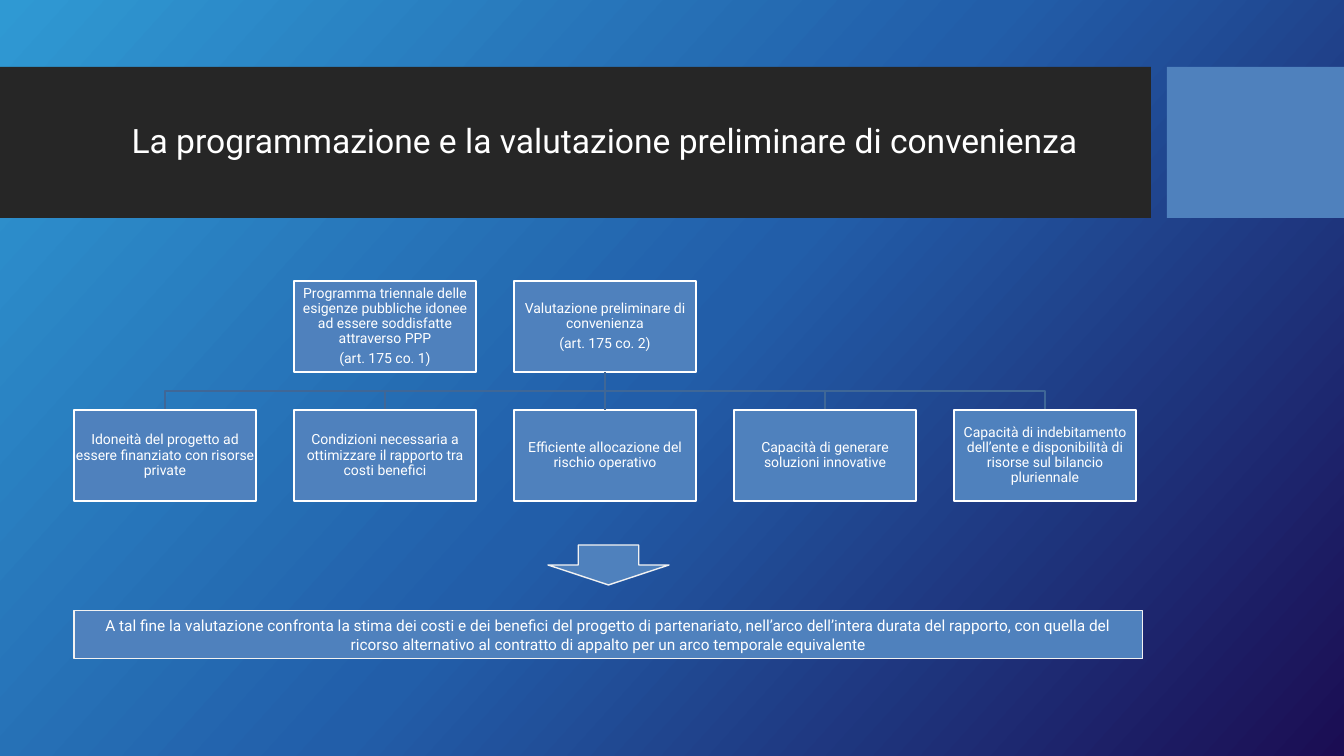
import dataclasses
import copy

import lxml.etree
import pptx
import pptx.dml.color
import pptx.enum.shapes
import pptx.enum.text
import pptx.oxml.ns
import pptx.util

RGB = pptx.dml.color.RGBColor
SHAPE = pptx.enum.shapes.MSO_SHAPE
MIDDLE = pptx.enum.text.MSO_ANCHOR.MIDDLE
CENTER = pptx.enum.text.PP_ALIGN.CENTER
qn = pptx.oxml.ns.qn

WHITE = RGB(0xFF, 0xFF, 0xFF)
PALE = RGB(0xF2, 0xF2, 0xF2)
BLUE = RGB(0x4F, 0x81, 0xBD)
STEEL = RGB(0x3F, 0x67, 0x97)
DARK = RGB(0x26, 0x26, 0x26)
STOPS = [
    (0, RGB(0x2F, 0x99, 0xD3)),
    (0.5, RGB(0x22, 0x5E, 0xA9)),
    (1, RGB(0x1B, 0x0D, 0x53)),
]
FONT = "Roboto"
SCALE = 914400 / 100.8

LEFT, PITCH = 74, 220
BOX_W, BOX_H = 182, 91
TOP_ROW, LOW_ROW = 281, 410


@dataclasses.dataclass
class Box:
    x: int
    y: int
    w: int
    h: int
    fill: RGB
    line: RGB | None = None
    width: float = 1
    kind: int = SHAPE.RECTANGLE


@dataclasses.dataclass
class Node:
    col: int
    row: int
    text: list[str]


NODES = [
    Node(1, TOP_ROW, [
        "Programma triennale delle esigenze pubbliche idonee ad essere soddisfatte attraverso PPP",
        "(art. 175 co. 1)",
    ]),
    Node(2, TOP_ROW, ["Valutazione preliminare di convenienza", "(art. 175 co. 2)"]),
    Node(0, LOW_ROW, ["Idoneità del progetto ad essere finanziato con risorse private"]),
    Node(1, LOW_ROW, ["Condizioni necessaria a ottimizzare il rapporto tra costi benefici"]),
    Node(2, LOW_ROW, ["Efficiente allocazione del rischio operativo"]),
    Node(3, LOW_ROW, ["Capacità di generare soluzioni innovative"]),
    Node(4, LOW_ROW, [
        "Capacità di indebitamento dell’ente e disponibilità di risorse sul bilancio pluriennale",
    ]),
]
TITLE = "La programmazione e la valutazione preliminare di convenienza"
CLOSING = (
    "A tal fine la valutazione confronta la stima dei costi e dei benefici del progetto di "
    "partenariato, nell’arco dell’intera durata del rapporto, con quella del ricorso "
    "alternativo al contratto di appalto per un arco temporale equivalente"
)


def px(n: float) -> int:
    return pptx.util.Emu(round(n * SCALE))


def paint(slide) -> None:
    """Fill the background with the three-stop gradient."""
    fill = slide.background.fill
    fill.gradient()
    stops = slide.element.find(".//" + qn("a:gsLst"))
    stops.insert(1, copy.deepcopy(stops[0]))
    for stop, (place, color) in zip(fill.gradient_stops, STOPS):
        stop.position = place
        stop.color.rgb = color
    fill.gradient_angle = 318


def draw(slide, box: Box):
    shape = slide.shapes.add_shape(box.kind, px(box.x), px(box.y), px(box.w), px(box.h))
    shape.shadow.inherit = False
    shape.fill.solid()
    shape.fill.fore_color.rgb = box.fill
    if box.line is None:
        shape.line.fill.background()
    else:
        shape.line.color.rgb = box.line
        shape.line.width = pptx.util.Pt(box.width)
    return shape


def write(shape, text: list[str], size: int, space: float = 1, after: float = 0) -> None:
    frame = shape.text_frame
    frame.word_wrap = True
    frame.vertical_anchor = MIDDLE
    for i, line in enumerate(text):
        par = frame.add_paragraph() if i else frame.paragraphs[0]
        par.alignment = CENTER
        par.line_spacing = space
        par.space_after = pptx.util.Pt(after)
        run = par.add_run()
        run.text = line
        run.font.name = FONT
        run.font.size = pptx.util.Pt(size)
        run.font.color.rgb = WHITE


def add_node(slide, node: Node):
    x = LEFT + node.col * PITCH
    shape = draw(slide, Box(x, node.row, BOX_W, BOX_H, BLUE, WHITE))
    frame = shape.text_frame
    frame.margin_left = frame.margin_right = px(1)
    frame.margin_top = frame.margin_bottom = px(1)
    write(shape, node.text, 10, 0.9, 3.5)
    return shape


def add_branch(slide, col: int) -> None:
    """Draw the bent line from the middle column down to another one."""
    start = LEFT + 2 * PITCH + BOX_W // 2
    end = LEFT + col * PITCH + BOX_W // 2
    base = TOP_ROW + BOX_H
    mid = (base + LOW_ROW) // 2
    form = slide.shapes.build_freeform(start, base, SCALE)
    form.add_line_segments([(start, mid), (end, mid), (end, LOW_ROW)], close=False)
    shape = form.convert_to_shape()
    shape.shadow.inherit = False
    shape.fill.background()
    shape.line.color.rgb = STEEL
    shape.line.width = pptx.util.Pt(1)


def add_stem(slide, top, low) -> None:
    """Join two boxes of the same column with a straight line."""
    stem = slide.shapes.add_connector(pptx.enum.shapes.MSO_CONNECTOR.STRAIGHT, 0, 0, 0, 0)
    stem.begin_connect(top, 2)
    stem.end_connect(low, 0)
    stem.line.color.rgb = STEEL
    stem.line.width = pptx.util.Pt(1)
    lxml.etree.SubElement(stem.element.spPr, qn("a:effectLst"))


def main() -> None:
    deck = pptx.Presentation()
    deck.slide_width, deck.slide_height = px(1344), px(756)
    slide = deck.slides.add_slide(deck.slide_layouts[6])
    paint(slide)

    draw(slide, Box(0, 67, 1151, 151, DARK))
    draw(slide, Box(1167, 67, 177, 151, BLUE))
    title = slide.shapes.add_textbox(px(75), px(83), px(1059), px(119))
    write(title, [TITLE], 24, 0.9)

    for col in (4, 3, 1, 0):
        add_branch(slide, col)
    boxes = {(node.col, node.row): add_node(slide, node) for node in NODES}
    add_stem(slide, boxes[2, TOP_ROW], boxes[2, LOW_ROW])

    closing = draw(slide, Box(74, 611, 1069, 48, BLUE, PALE, 0.75))
    write(closing, [CLOSING], 11)
    draw(slide, Box(548, 545, 121, 40, BLUE, PALE, kind=SHAPE.DOWN_ARROW))
    deck.save("out.pptx")


if __name__ == "__main__":
    main()
